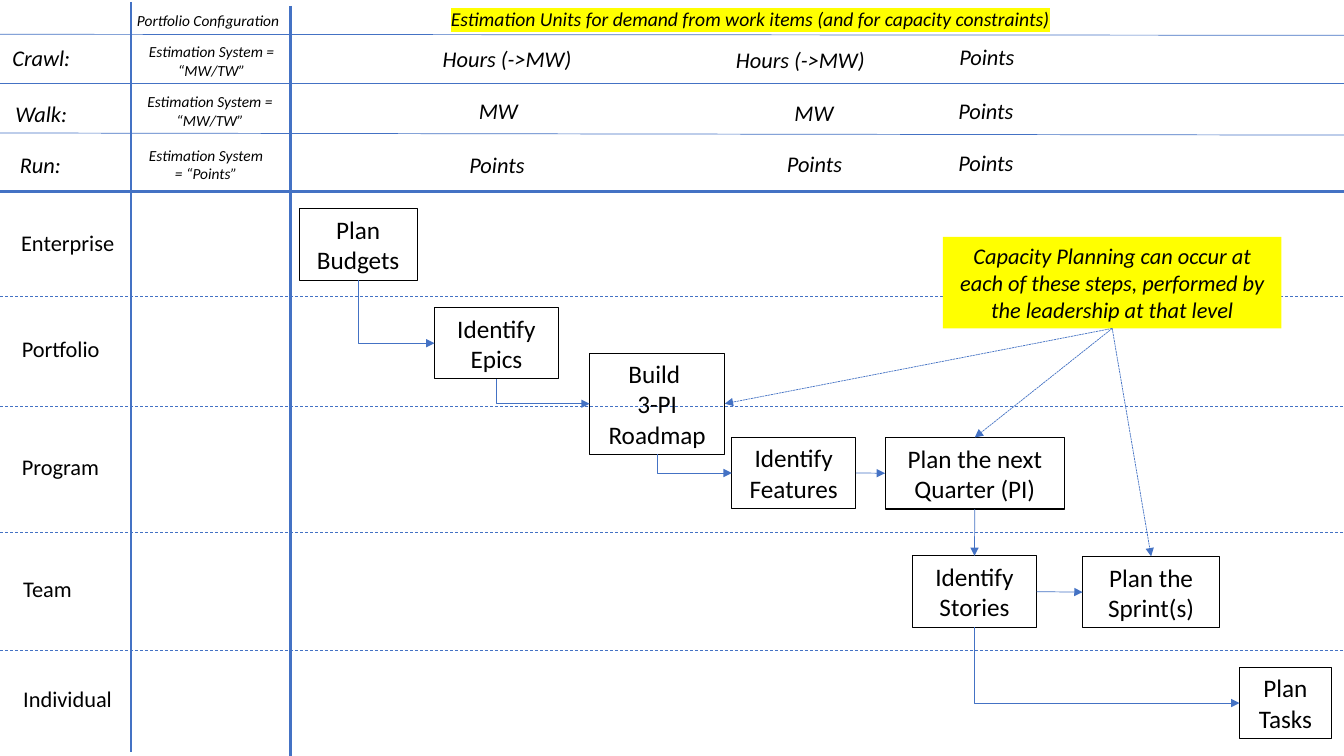
from dataclasses import dataclass

import lxml.etree
import pptx
import pptx.dml.color
import pptx.enum.dml
import pptx.enum.shapes
import pptx.enum.text
import pptx.oxml.ns
import pptx.util

Pt = pptx.util.Pt
qn = pptx.oxml.ns.qn
Align = pptx.enum.text.PP_ALIGN
Dash = pptx.enum.dml.MSO_LINE
Connector = pptx.enum.shapes.MSO_CONNECTOR
TOP, LEFT, BOTTOM, RIGHT = range(4)


@dataclass(frozen=True)
class Theme:
    font: str = "Calibri"
    ink: str = "000000"
    rule: str = "4472C4"
    marker: str = "FFFF00"
    small: float = 11
    title: float = 14
    label: float = 16
    step: float = 18
    thin: float = 0.5
    outline: float = 0.75
    thick: float = 2


THEME = Theme()
PAGE_WIDTH, PAGE_HEIGHT = 960, 540
STEP_HEIGHT = 51.1
LABEL_HEIGHT = 26.6

LANES = [("Enterprise", 8, 160, 82), ("Portfolio", 8.5, 236.2, 71.3),
         ("Program", 8.5, 320.4, 70.6), ("Team", 9.5, 407.5, 49.7),
         ("Individual", 9.5, 486, 78.5)]
LANE_RULES = [211.7, 290.2, 380.2, 464.4]
STAGE_RULES = [(24.5, 25.2), (59.8, 59.8), (95, 96.5)]
STAGES = [("Crawl:", 29.5, 28.1), ("Walk:", 29.5, 67.7), ("Run:", 28.8, 104.4)]
CONFIGURATIONS = [("Estimation System = “MW/TW”", 97.2, 26.6, 108),
                  ("Estimation System = “MW/TW”", 95, 62.6, 110.2),
                  ("Estimation System = “Points”", 97.2, 100.8, 100)]
UNITS = [("Hours (->MW)", 362.2, 28.8), ("Hours (->MW)", 571.7, 29.5),
         ("Points", 704.9, 27.4),
         ("MW", 356, 66.2), ("MW", 581.4, 67), ("Points", 704.2, 65.5),
         ("Points", 355, 104.4), ("Points", 581.8, 103.7), ("Points", 704.2, 103)]
STEPS = {
    "budgets": ("Plan Budgets", 213.8, 149, 84.2, STEP_HEIGHT),
    "epics": ("Identify Epics", 310.3, 219.6, 88.6, STEP_HEIGHT),
    "roadmap": ("Build \n3-PI Roadmap", 421.2, 252.2, 96.5, 72.3),
    "features": ("Identify Features", 522.7, 312.3, 88.6, STEP_HEIGHT),
    "quarter": ("Plan the next Quarter (PI)", 632.2, 312.5, 128.2, STEP_HEIGHT),
    "stories": ("Identify Stories", 651.8, 397.1, 88.6, STEP_HEIGHT),
    "sprint": ("Plan the Sprint(s)", 773.3, 397.4, 97.9, STEP_HEIGHT),
    "tasks": ("Plan Tasks", 885.4, 476.6, 65.5, STEP_HEIGHT),
}
BENT_FLOWS = [("budgets", "epics"), ("epics", "roadmap"),
              ("roadmap", "features"), ("stories", "tasks")]
STRAIGHT_FLOWS = [("features", RIGHT, "quarter", LEFT),
                  ("quarter", BOTTOM, "stories", TOP),
                  ("stories", RIGHT, "sprint", LEFT)]
CAPACITY_TARGETS = [("roadmap", RIGHT), ("quarter", TOP), ("sprint", TOP)]


def color(code):
    return pptx.dml.color.RGBColor.from_string(code)


def write(frame, text, size=THEME.label, align=Align.CENTER, italic=False, highlight=None):
    for index, line in enumerate(text.split("\n")):
        para = frame.paragraphs[0] if index == 0 else frame.add_paragraph()
        para.alignment = align
        span = para.add_run()
        span.text = line
        span.font.size = Pt(size)
        span.font.italic = italic
        span.font.color.rgb = color(THEME.ink)
        if highlight:
            mark = lxml.etree.Element(qn("a:highlight"))
            lxml.etree.SubElement(mark, qn("a:srgbClr"), val=highlight)
            span.font._element.find(qn("a:solidFill")).addnext(mark)
        span.font.name = THEME.font


def add_label(page, text, left, top, width, height=LABEL_HEIGHT, wrap=False, **style):
    box = page.shapes.add_textbox(Pt(left), Pt(top), Pt(width), Pt(height))
    box.text_frame.word_wrap = wrap
    write(box.text_frame, text, **style)


def add_box(page, text, left, top, width, height, fill=None, outline=None, **style):
    box = page.shapes.add_shape(pptx.enum.shapes.MSO_SHAPE.RECTANGLE,
                                Pt(left), Pt(top), Pt(width), Pt(height))
    box.shadow.inherit = False
    if fill:
        box.fill.solid()
        box.fill.fore_color.rgb = color(fill)
    else:
        box.fill.background()
    if outline:
        box.line.color.rgb = color(outline)
        box.line.width = Pt(THEME.outline)
    else:
        box.line.fill.background()
    box.text_frame.word_wrap = True
    box.text_frame.vertical_anchor = pptx.enum.text.MSO_ANCHOR.MIDDLE
    write(box.text_frame, text, **style)
    return box


def add_rule(page, start=(0, 0), end=(0, 0), weight=THEME.thin, dash=None,
             kind=Connector.STRAIGHT):
    rule = page.shapes.add_connector(kind, *map(Pt, start + end))
    rule.line.color.rgb = color(THEME.rule)
    rule.line.width = Pt(weight)
    if dash:
        rule.line.dash_style = dash
    lxml.etree.SubElement(rule._element.spPr, qn("a:effectLst"))
    return rule


def add_arrow(page, source, source_side, target, target_side, **style):
    arrow = add_rule(page, **style)
    arrow.begin_connect(source, source_side)
    arrow.end_connect(target, target_side)
    outline = arrow._element.spPr.find(qn("a:ln"))
    lxml.etree.SubElement(outline, qn("a:tailEnd"), type="triangle")
    return arrow


def add_bent_arrow(page, source, target):
    arrow = add_arrow(page, source, BOTTOM, target, LEFT, kind=Connector.ELBOW)
    across, down = arrow.width, arrow.height
    arrow.left += (across - down) // 2
    arrow.top += (down - across) // 2
    arrow.width, arrow.height = down, across
    properties = arrow._element.spPr
    frame = properties.find(qn("a:xfrm"))
    frame.set("rot", "16200000")
    frame.set("flipH", "1")
    properties.find(qn("a:prstGeom")).set("prst", "bentConnector2")


def add_grid(page):
    for left_end, right_end in STAGE_RULES:
        add_rule(page, (0, left_end), (PAGE_WIDTH, right_end))
    for height in LANE_RULES:
        add_rule(page, (0, height), (PAGE_WIDTH, height), dash=Dash.DASH)
    add_rule(page, (0, 136.8), (PAGE_WIDTH, 136.8), THEME.thick)
    add_rule(page, (207.4, 4.3), (207.4, PAGE_HEIGHT), THEME.thick)
    add_rule(page, (93.6, 1.4), (93.6, 537.1), THEME.thick)


def add_labels(page):
    for text, left, top, width in LANES:
        add_label(page, text, left, top, width, align=Align.LEFT)
    for text, center, top in STAGES + UNITS:
        add_label(page, text, center - 54, top, 108, italic=True)
    for text, left, top, width in CONFIGURATIONS:
        add_label(page, text, left, top, width, 33.8, wrap=True,
                  size=THEME.small, italic=True)
    add_label(page, "Portfolio Configuration", 90, 4.3, 117.4, 20.9,
              size=THEME.small, italic=True)
    add_label(page, "Estimation Units for demand from work items (and for capacity constraints)",
              277.2, 1.4, 517.7, 24.5, wrap=True, size=THEME.title, italic=True,
              highlight=THEME.marker)


def add_flow(page):
    steps = {name: add_box(page, *step, outline=THEME.ink, size=THEME.step)
             for name, step in STEPS.items()}
    callout = add_box(page, "Capacity Planning can occur at each of these steps, "
                      "performed by the leadership at that level",
                      673.5, 169.2, 241.9, 65.4, fill=THEME.marker, italic=True)
    for source, target in BENT_FLOWS:
        add_bent_arrow(page, steps[source], steps[target])
    for source, source_side, target, target_side in STRAIGHT_FLOWS:
        add_arrow(page, steps[source], source_side, steps[target], target_side)
    for target, side in CAPACITY_TARGETS:
        add_arrow(page, callout, BOTTOM, steps[target], side, dash=Dash.SQUARE_DOT)


def main():
    deck = pptx.Presentation()
    deck.slide_width, deck.slide_height = Pt(PAGE_WIDTH), Pt(PAGE_HEIGHT)
    page = deck.slides.add_slide(deck.slide_layouts[6])
    add_grid(page)
    add_labels(page)
    add_flow(page)
    deck.save("out.pptx")


if __name__ == "__main__":
    main()
